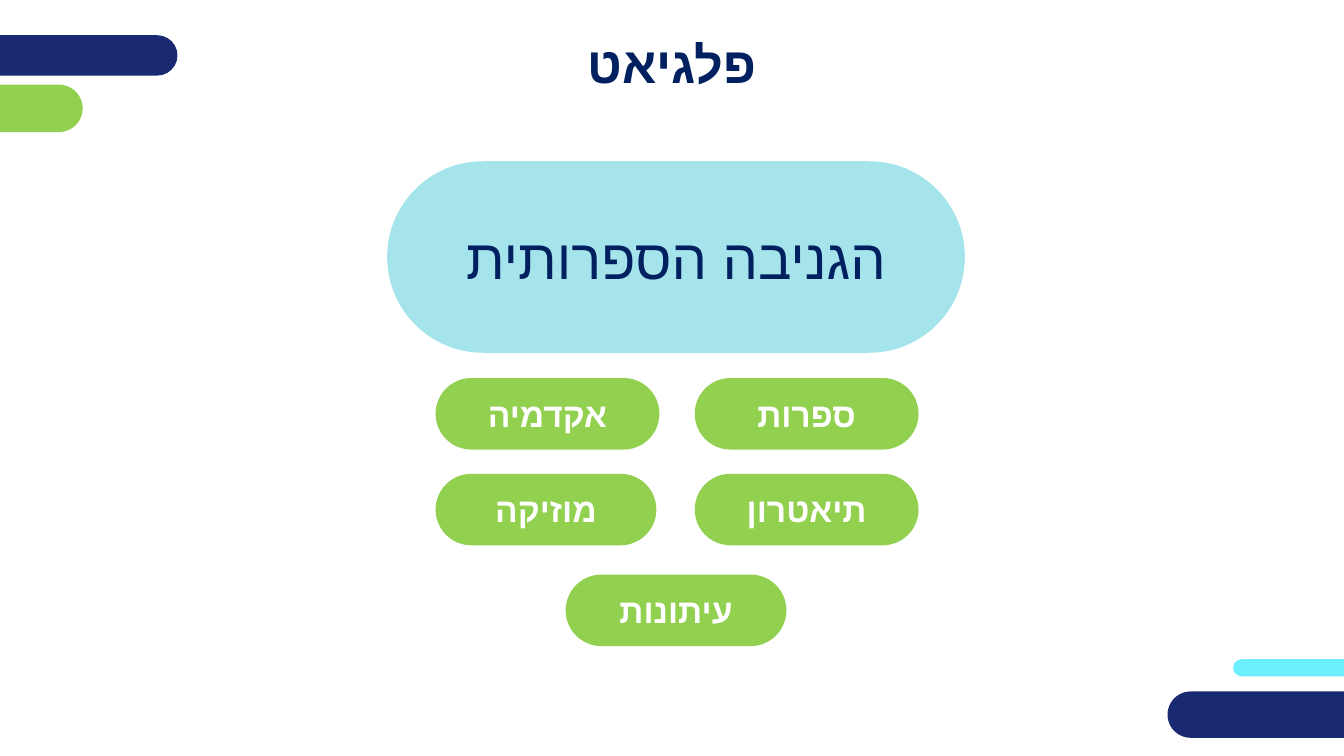
import pptx
import pptx.dml.color
import pptx.enum.shapes
import pptx.enum.text
import pptx.oxml.ns
import pptx.util
from lxml import etree
from pptx.util import Inches

COLORS = {
    "navy": "192A72",
    "text": "002060",
    "green": "92D050",
    "cyan": "6CF0FF",
    "pale": "A6E4EC",
    "white": "FFFFFF",
}
FONT = "Arial"

# left, top, width, height, colour; each bar bleeds off a slide edge
EDGE_BARS = [
    (12.23, 6.54, 1.74, 0.17, "cyan"),
    (-0.45, 0.84, 1.27, 0.47, "green"),
    (-0.53, 0.35, 2.29, 0.4, "navy"),
    (11.58, 6.86, 2.4, 0.46, "navy"),
]
# left, top, width, label
FIELDS = [
    (4.32, 3.75, 2.22, "אקדמיה"),
    (4.32, 4.7, 2.19, "מוזיקה"),
    (6.89, 3.75, 2.22, "ספרות"),
    (6.89, 4.7, 2.22, "תיאטרון"),
    (5.61, 5.7, 2.19, "עיתונות"),
]
FIELD_HEIGHT = 0.71


def rgb(name):
    return pptx.dml.color.RGBColor.from_string(COLORS[name])


def write_hebrew(shape, text, size, color, bold=False):
    """Set one centred right-to-left paragraph."""
    frame = shape.text_frame
    frame.word_wrap = True
    frame.text = text
    paragraph = frame.paragraphs[0]
    paragraph.alignment = pptx.enum.text.PP_ALIGN.CENTER
    paragraph._p.get_or_add_pPr().set("rtl", "1")
    run = paragraph.runs[0]
    run.font.size = pptx.util.Pt(size)
    run.font.bold = bold
    run.font.color.rgb = rgb(color)
    run.font.name = FONT
    run.font.language_id = pptx.enum.lang.MSO_LANGUAGE_ID.HEBREW
    complex_font = etree.SubElement(run._r.get_or_add_rPr(), pptx.oxml.ns.qn("a:cs"))
    complex_font.set("typeface", FONT)


def add_pill(slide, left, top, width, height, color):
    shape = slide.shapes.add_shape(
        pptx.enum.shapes.MSO_SHAPE.ROUNDED_RECTANGLE,
        Inches(left), Inches(top), Inches(width), Inches(height))
    shape.adjustments[0] = 0.5
    shape.shadow.inherit = False
    shape.fill.solid()
    shape.fill.fore_color.rgb = rgb(color)
    shape.line.fill.background()
    shape.text_frame.vertical_anchor = pptx.enum.text.MSO_ANCHOR.MIDDLE
    return shape


def add_title(slide, text):
    box = slide.shapes.add_textbox(Inches(0), Inches(0.28), Inches(13.33), Inches(0.71))
    write_hebrew(box, text, 36, "text", bold=True)
    box.text_frame.auto_size = pptx.enum.text.MSO_AUTO_SIZE.SHAPE_TO_FIT_TEXT


def main():
    presentation = pptx.Presentation()
    presentation.slide_width = Inches(13.33)
    presentation.slide_height = Inches(7.5)
    slide = presentation.slides.add_slide(presentation.slide_layouts[6])

    for bar in EDGE_BARS:
        add_pill(slide, *bar)
    for left, top, width, label in FIELDS:
        pill = add_pill(slide, left, top, width, FIELD_HEIGHT, "green")
        write_hebrew(pill, label, 24, "white", bold=True)
    add_title(slide, "פלגיאט")
    definition = add_pill(slide, 3.84, 1.6, 5.73, 1.9, "pale")
    write_hebrew(definition, "הגניבה הספרותית", 40, "text")

    presentation.save("out.pptx")


if __name__ == "__main__":
    import pptx.enum.lang
    main()
